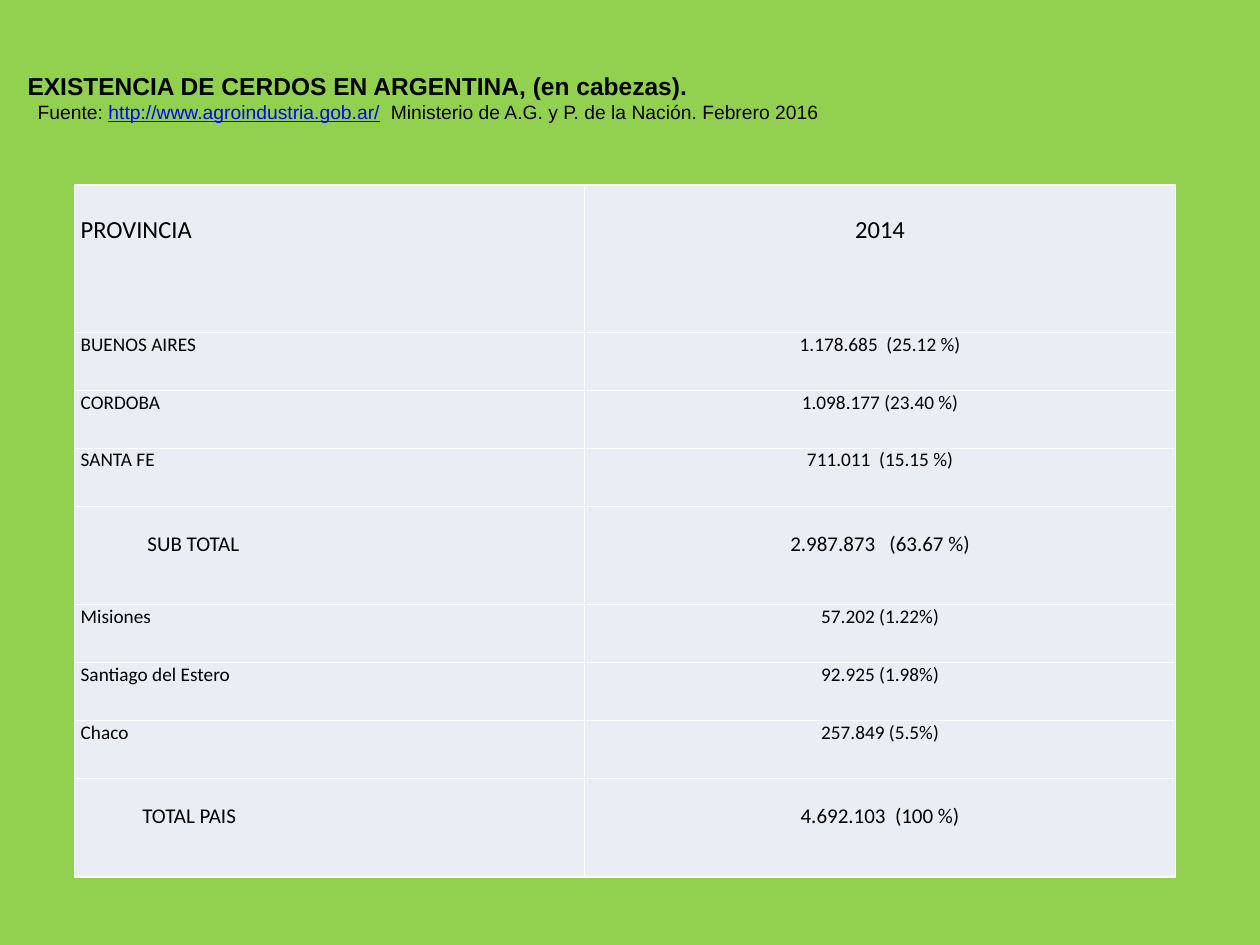
import dataclasses

import pptx
import pptx.dml.color
import pptx.enum.text
import pptx.oxml
import pptx.oxml.ns
import pptx.util
from pptx.util import Inches

ALIGN = pptx.enum.text.PP_ALIGN
ANCHOR = pptx.enum.text.MSO_ANCHOR
BLACK, WHITE, BLUE = "000000", "FFFFFF", "0000FF"
GREEN, PALE = "92D050", "E9EDF4"


@dataclasses.dataclass
class Row:
    label: str
    value: str
    size: float = 11
    high: float = 0.46
    drop: float = 0
    indent: float = 0


ROWS = [
    Row("PROVINCIA", "2014", 14, 1.17, 0.24),
    Row("BUENOS AIRES", "1.178.685  (25.12 %)"),
    Row("CORDOBA", "1.098.177 (23.40 %)"),
    Row("SANTA FE", "711.011  (15.15 %)"),
    Row("SUB TOTAL", "2.987.873   (63.67 %)", 12, 0.78, 0.2, 0.53),
    Row("Misiones", "57.202 (1.22%)"),
    Row("Santiago del Estero", "92.925 (1.98%)"),
    Row("Chaco", "257.849 (5.5%)"),
    Row("TOTAL PAIS", "4.692.103  (100 %)", 12, 0.78, 0.2, 0.49),
]


def color(code: str) -> pptx.dml.color.RGBColor:
    return pptx.dml.color.RGBColor.from_string(code)


def style(run, face: str, size: float, code: str = BLACK,
          bold: bool = False, line: bool = False) -> None:
    font = run.font
    font.name, font.size = face, pptx.util.Pt(size)
    font.bold, font.underline = bold, line
    font.color.rgb = color(code)


def edge(cell) -> None:
    """Give the cell a thin white border on all four sides."""
    props = cell._tc.get_or_add_tcPr()
    space = pptx.oxml.ns.nsdecls("a")
    for spot, side in enumerate("LRTB"):
        props.insert(spot, pptx.oxml.parse_xml(
            f'<a:ln{side} {space} w="12700"><a:solidFill>'
            f'<a:srgbClr val="{WHITE}"/></a:solidFill></a:ln{side}>'))


def fill_cell(cell, text: str, row: Row, align, indent: float = 0) -> None:
    cell.text_frame.text = text
    cell.margin_left = Inches(0.05 + indent)
    cell.margin_right = Inches(0.05)
    cell.margin_top = Inches(row.drop)
    cell.margin_bottom = 0
    cell.vertical_anchor = ANCHOR.TOP
    cell.fill.solid()
    cell.fill.fore_color.rgb = color(PALE)
    edge(cell)
    para = cell.text_frame.paragraphs[0]
    para.alignment = align
    style(para.runs[0], "Calibri", row.size)


def add_title(slide) -> None:
    box = slide.shapes.add_textbox(
        Inches(0.12), Inches(0.52), Inches(9.88), Inches(0.5))
    frame = box.text_frame
    frame.word_wrap = True
    frame.vertical_anchor = ANCHOR.MIDDLE
    frame.text = "EXISTENCIA DE CERDOS EN ARGENTINA, (en cabezas)."
    style(frame.paragraphs[0].runs[0], "Arial", 14, bold=True)

    source = frame.add_paragraph()
    source._p.get_or_add_pPr().set("marL", str(Inches(0.08)))
    for text, code, line in [
        ("Fuente: ", BLACK, False),
        ("http://www.agroindustria.gob.ar/", BLUE, True),
        ("  Ministerio de A.G. y P. de la Nación. Febrero 2016", BLACK, False),
    ]:
        run = source.add_run()
        run.text = text
        style(run, "Arial", 11, code, line=line)


def add_stock(slide) -> None:
    """Add the table of pig stock by province."""
    table = slide.shapes.add_table(
        len(ROWS), 2, Inches(0.59), Inches(1.47),
        Inches(8.74), Inches(sum(row.high for row in ROWS))).table
    table.first_row = table.horz_banding = False
    for column, wide in zip(table.columns, (4.05, 4.69)):
        column.width = Inches(wide)
    for spot, row in enumerate(ROWS):
        table.rows[spot].height = Inches(row.high)
        fill_cell(table.cell(spot, 0), row.label, row, ALIGN.LEFT, row.indent)
        fill_cell(table.cell(spot, 1), row.value, row, ALIGN.CENTER)


def main() -> None:
    deck = pptx.Presentation()
    deck.slide_width, deck.slide_height = Inches(10), Inches(7.5)
    slide = deck.slides.add_slide(deck.slide_layouts[6])
    slide.background.fill.solid()
    slide.background.fill.fore_color.rgb = color(GREEN)
    add_title(slide)
    add_stock(slide)
    deck.save("out.pptx")


if __name__ == "__main__":
    main()
